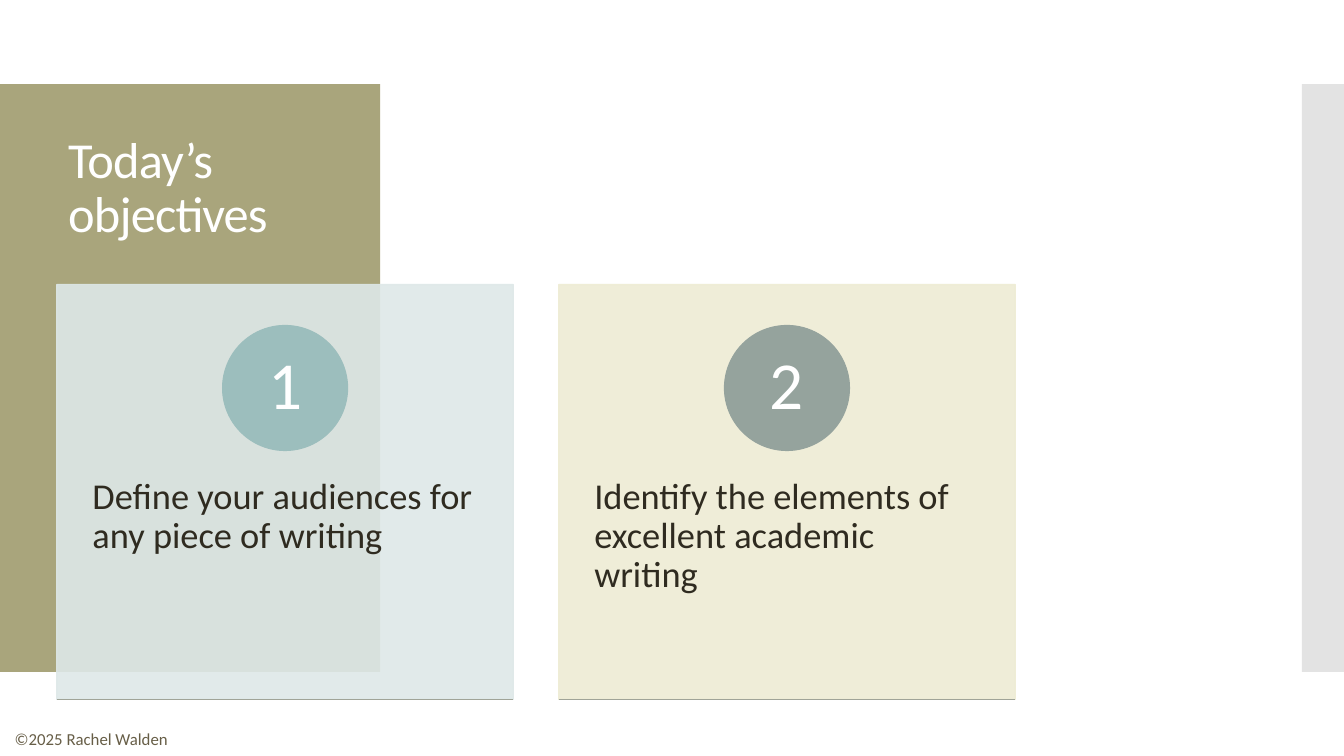
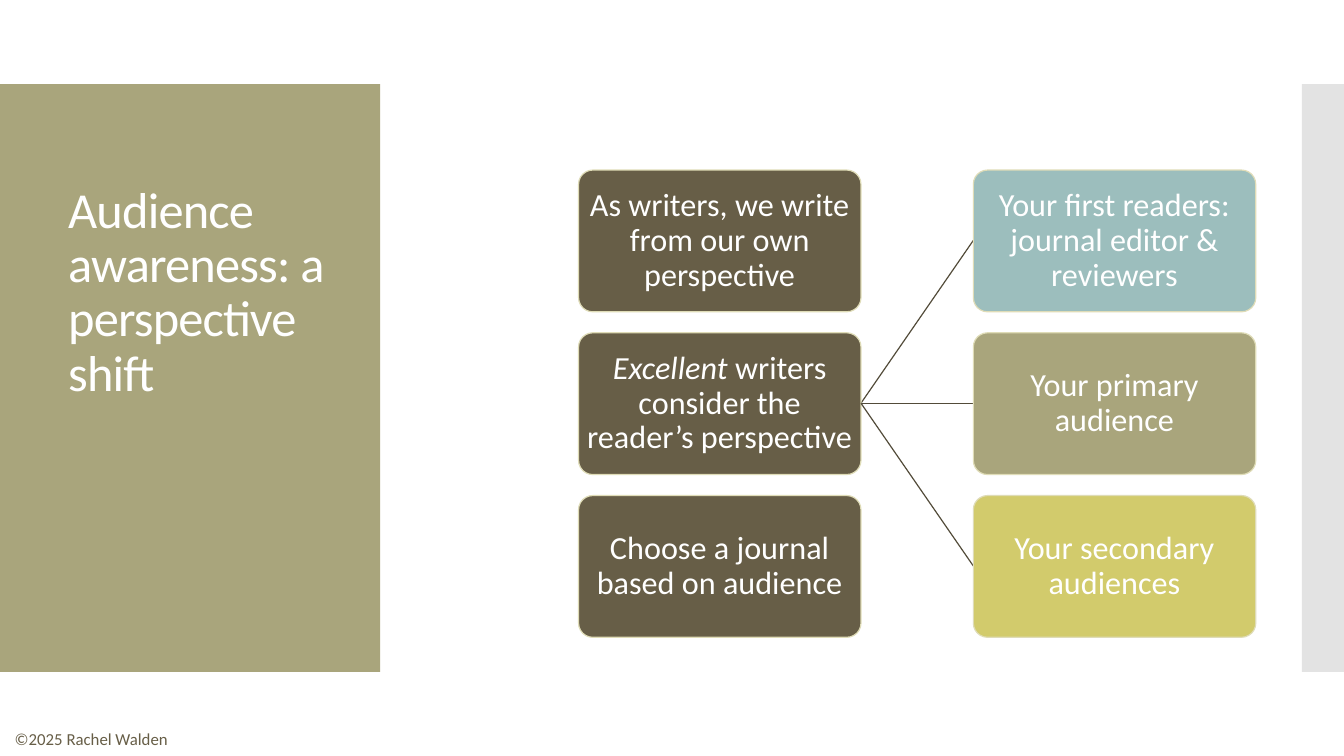
from lxml import etree
from pptx import Presentation
from pptx import util as u
from pptx.dml.color import RGBColor
from pptx.enum import shapes, text
from pptx.oxml import ns

PX = 9525
FONT = "Calibri"
WHITE = RGBColor(0xFF, 0xFF, 0xFF)
INK = RGBColor(0x2F, 0x2B, 0x20)
BROWN = RGBColor(0x67, 0x5E, 0x47)
DARK_BROWN = RGBColor(0x52, 0x4B, 0x39)
OLIVE = RGBColor(0xA9, 0xA5, 0x7C)
TEAL = RGBColor(0x9C, 0xBE, 0xBD)
SAGE = RGBColor(0x95, 0xA3, 0x9D)
YELLOW = RGBColor(0xD2, 0xCB, 0x6C)
CREAM = RGBColor(0xDF, 0xDC, 0xB7)
PALE_TEAL = RGBColor(0xDE, 0xE8, 0xE8)
PALE_CREAM = RGBColor(0xEE, 0xEC, 0xD4)
GREY = RGBColor(0xC8, 0xC8, 0xC8)
RULE_GREY = RGBColor(0xA0, 0xA4, 0x98)

RECT = shapes.MSO_SHAPE.RECTANGLE
ROUND = shapes.MSO_SHAPE.ROUNDED_RECTANGLE
OVAL = shapes.MSO_SHAPE.OVAL
LEFT = text.PP_ALIGN.LEFT
CENTER = text.PP_ALIGN.CENTER
TOP = text.MSO_ANCHOR.TOP
MIDDLE = text.MSO_ANCHOR.MIDDLE


def px(*lengths):
    """Turn lengths in px into EMU."""
    return [u.Emu(length * PX) for length in lengths]


def set_alpha(shape, percent):
    """Make every solid colour of a shape partly transparent."""
    for color in shape.fill._xPr.iter(ns.qn("a:srgbClr")):
        etree.SubElement(color, ns.qn("a:alpha")).set("val", str(percent * 1000))


def add_panel(page, kind, box, fill, line=None, alpha=100):
    """Add a filled preset shape without a shadow."""
    panel = page.shapes.add_shape(kind, *px(*box))
    panel.shadow.inherit = False
    panel.fill.solid()
    panel.fill.fore_color.rgb = fill
    if line is None:
        panel.line.fill.background()
    else:
        panel.line.color.rgb = line
        panel.line.width = u.Pt(0.85)
    if alpha < 100:
        set_alpha(panel, alpha)
    return panel


def add_line(page, start, end, color):
    """Add a thin straight line between two points."""
    line = page.shapes.add_connector(shapes.MSO_CONNECTOR.STRAIGHT, *px(*start, *end))
    line.line.color.rgb = color
    line.line.width = u.Pt(0.85)
    etree.SubElement(line._element.spPr, ns.qn("a:effectLst"))


def write(shape, words, size, color, align=LEFT, anchor=MIDDLE,
          insets=(10, 5, 10, 5), spacing=0.9, lead=""):
    """Write one paragraph into a shape, after an optional italic lead."""
    frame = shape.text_frame
    frame.word_wrap = True
    frame.vertical_anchor = anchor
    (frame.margin_left, frame.margin_top,
     frame.margin_right, frame.margin_bottom) = px(*insets)
    para = frame.paragraphs[0]
    para.text = lead or words
    if lead:
        para.runs[0].font.italic = True
        para.add_run().text = words
    para.alignment = align
    para.line_spacing = spacing
    for span in para.runs:
        span.font.name = FONT
        span.font.size = u.Pt(size)
        span.font.color.rgb = color
    return para


def add_page(deck, title, title_box):
    """Add a slide with side bands, title and copyright footer."""
    page = deck.slides.add_slide(deck.slide_layouts[6])
    add_panel(page, RECT, (0, 80, 362, 560), OLIVE)
    add_panel(page, RECT, (1240, 80, 40, 560), GREY, alpha=50)
    heading = write(page.shapes.add_textbox(*px(*title_box)), title, 36, WHITE)
    for span in heading.runs:
        span._r.get_or_add_rPr().set("spc", "-60")
    footer = page.shapes.add_textbox(*px(4, 689, 180, 29))
    write(footer, "©2025 Rachel Walden", 12, BROWN, anchor=TOP, spacing=1)
    return page


def add_objective(page, box, number, words, fill, badge_fill):
    """Add a card with a numbered badge above its text."""
    left, top, width, height = box
    badge_size = 119
    card = add_panel(page, RECT, box, fill, fill, alpha=90)
    write(card, words, 26, INK, anchor=TOP, insets=(34, 184, 34, 34))
    badge_box = (left + (width - badge_size + 1) // 2, top + 39, badge_size, badge_size)
    badge = add_panel(page, OVAL, badge_box, badge_fill, badge_fill)
    write(badge, str(number), 48, WHITE, CENTER, insets=(0, 0, 0, 0))
    add_line(page, (left, top + height), (left + width, top + height), RULE_GREY)


def add_step(page, box, words, fill, lead=""):
    """Add a rounded box with centred text."""
    step = add_panel(page, ROUND, box, fill, CREAM)
    step.adjustments[0] = 0.1
    write(step, words, 23, WHITE, CENTER, insets=(2, 2, 2, 2), lead=lead)


def add_perspective_map(page, left, top):
    """Add writer boxes, reader boxes and the lines that join them."""
    width, height, row_pitch, column_pitch = 269, 135, 155, 376
    writers = [
        ("As writers, we write from our own perspective", ""),
        (" writers consider the reader’s perspective", "Excellent"),
        ("Choose a journal based on audience", ""),
    ]
    readers = [
        ("Your first readers: journal editor & reviewers", TEAL),
        ("Your primary audience", OLIVE),
        ("Your secondary audiences", YELLOW),
    ]
    reader_left = left + column_pitch
    middle = height // 2
    hub = (left + width, top + row_pitch + middle)
    for row, ((words, lead), (audience, fill)) in enumerate(zip(writers, readers)):
        row_top = top + row * row_pitch
        add_line(page, hub, (reader_left, row_top + middle), DARK_BROWN)
        add_step(page, (left, row_top, width, height), words, BROWN, lead)
        add_step(page, (reader_left, row_top, width, height), audience, fill)


def build_objectives(deck):
    """Build the slide of today's objectives."""
    page = add_page(deck, "Today’s\vobjectives", (55, 103, 912, 154))
    objectives = [
        ("Define your audiences for any piece of writing", PALE_TEAL, TEAL),
        ("Identify the elements of excellent academic writing", PALE_CREAM, SAGE),
    ]
    for index, (words, fill, badge_fill) in enumerate(objectives):
        box = (54 + index * 478, 271, 435, 395)
        add_objective(page, box, index + 1, words, fill, badge_fill)


def build_audience(deck):
    """Build the slide on audience awareness."""
    page = add_page(deck, "Audience\vawareness: a perspective shift", (55, 103, 296, 353))
    add_perspective_map(page, 551, 162)


def main():
    """Build and save the deck."""
    deck = Presentation()
    deck.slide_width, deck.slide_height = px(1280, 720)
    build_objectives(deck)
    build_audience(deck)
    deck.save("out.pptx")


if __name__ == "__main__":
    main()
